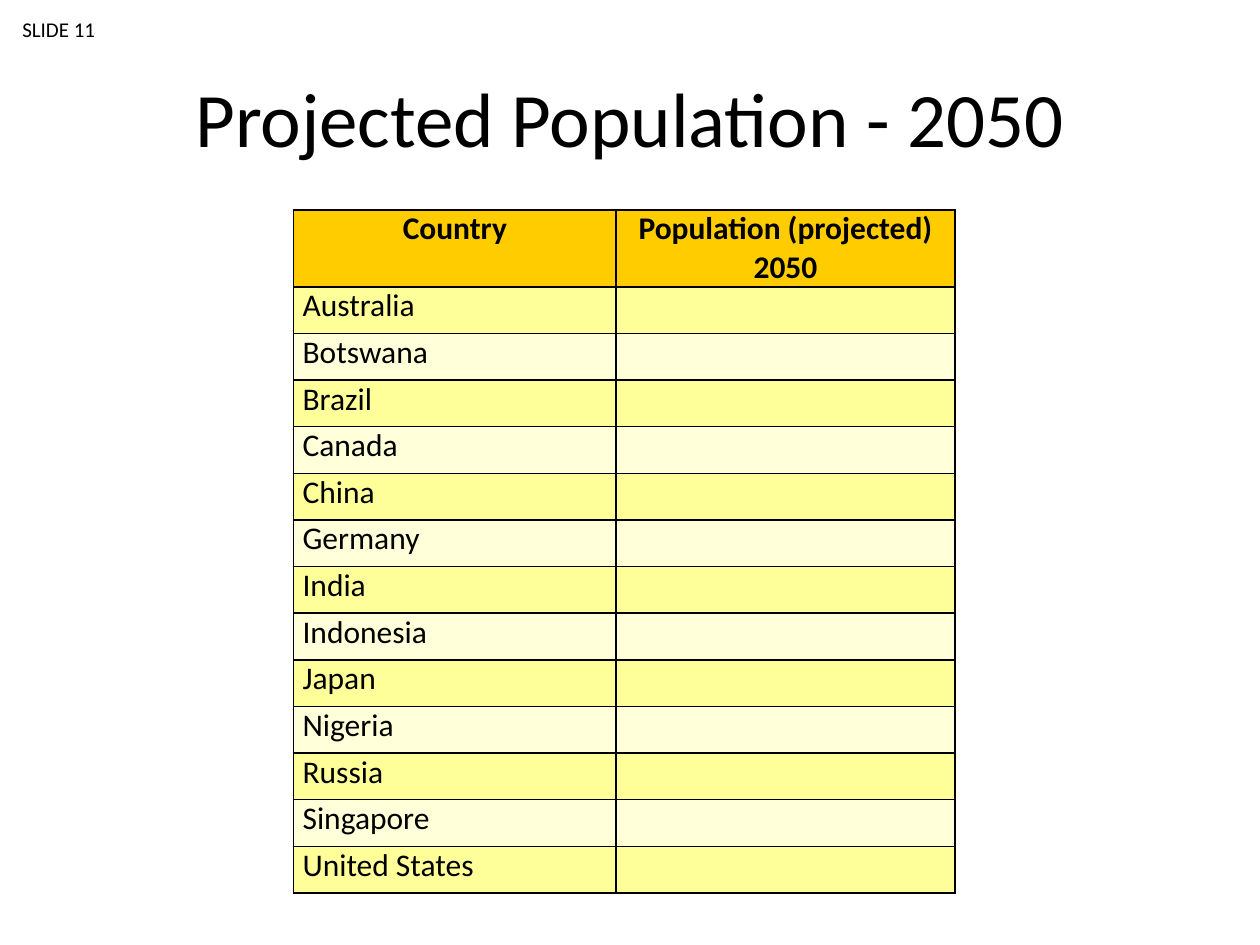
from dataclasses import dataclass
from typing import Optional

from lxml.etree import SubElement as Sub
from pptx import Presentation as Deck
from pptx.dml.color import RGBColor as Rgb
from pptx.enum.text import MSO_ANCHOR as Anchor, PP_ALIGN as Align
from pptx.oxml import parse_xml
from pptx.oxml.ns import nsdecls, qn
from pptx.util import Cm, Pt


@dataclass(frozen=True)
class Theme:
    font: str = "Calibri"
    ink: str = "000000"
    head: str = "FFCC00"
    band: str = "FFFF00"
    odd: int = 40
    even: int = 15
    title: int = 44
    body: int = 18
    small: int = 12
    rule: float = 1


@dataclass(frozen=True)
class Label:
    text: str
    left: float
    top: float
    width: float
    height: float
    size: int
    align: Align = Align.LEFT
    anchor: Anchor = Anchor.TOP
    wrap: bool = True


@dataclass(frozen=True)
class Row:
    cells: tuple[str, str]
    height: float
    fill: str
    alpha: Optional[int] = None
    bold: bool = False
    align: Align = Align.LEFT


THEME = Theme()
LABELS = (
    Label("Projected Population - 2050", 1.27, 0.76, 22.86, 3.18,
          THEME.title, Align.CENTER, Anchor.MIDDLE),
    Label("SLIDE 11", 0.2, 0.2, 2.01, 0.76, THEME.small, wrap=False),
)
LANDS = (
    "Australia", "Botswana", "Brazil", "Canada", "China", "Germany", "India",
    "Indonesia", "Japan", "Nigeria", "Russia", "Singapore", "United States",
)
ROWS = [Row(("Country", "Population (projected) 2050"), 1.55, THEME.head,
            bold=True, align=Align.CENTER)]
ROWS += [Row((land, ""), 0.94, THEME.band, (THEME.odd, THEME.even)[i % 2])
         for i, land in enumerate(LANDS)]
WIDTHS = (6.5, 6.83)


def write(frame, text: str, size: int, align: Align, bold: bool = False) -> None:
    para = frame.paragraphs[0]
    para.alignment = align
    para.font.size = Pt(size)
    if text:
        run = para.add_run()
        run.text = text
        run.font.name = THEME.font
        run.font.size = Pt(size)
        run.font.bold = bold
        run.font.color.rgb = Rgb.from_string(THEME.ink)


def add_label(slide, label: Label) -> None:
    box = slide.shapes.add_textbox(Cm(label.left), Cm(label.top),
                                   Cm(label.width), Cm(label.height))
    frame = box.text_frame
    frame.word_wrap = label.wrap
    frame.vertical_anchor = label.anchor
    write(frame, label.text, label.size, label.align)


def add_rules(cell) -> None:
    props = cell._tc.get_or_add_tcPr()
    for i, side in enumerate("LRTB"):
        props.insert(i, parse_xml(
            f'<a:ln{side} {nsdecls("a")} w="{Pt(THEME.rule)}"><a:solidFill>'
            f'<a:srgbClr val="{THEME.ink}"/></a:solidFill></a:ln{side}>'))


def fill_cell(cell, row: Row, text: str) -> None:
    cell.margin_left = cell.margin_right = Cm(0.18)
    cell.margin_top = cell.margin_bottom = 0
    cell.fill.solid()
    cell.fill.fore_color.rgb = Rgb.from_string(row.fill)
    if row.alpha is not None:
        tint = cell._tc.tcPr.find(qn("a:solidFill")).find(qn("a:srgbClr"))
        Sub(tint, qn("a:alpha"), val=str(row.alpha * 1000))
    add_rules(cell)
    write(cell.text_frame, text, THEME.body, row.align, row.bold)


def add_grid(slide, rows: list[Row], left: float, top: float) -> None:
    height = sum(row.height for row in rows)
    grid = slide.shapes.add_table(len(rows), len(WIDTHS), Cm(left), Cm(top),
                                  Cm(sum(WIDTHS)), Cm(height)).table
    for col, width in zip(grid.columns, WIDTHS):
        col.width = Cm(width)
    for line, row in zip(grid.rows, rows):
        line.height = Cm(row.height)
        for cell, text in zip(line.cells, row.cells):
            fill_cell(cell, row, text)


def main() -> None:
    deck = Deck()
    deck.slide_width, deck.slide_height = Cm(25.4), Cm(19.05)
    slide = deck.slides.add_slide(deck.slide_layouts[6])
    add_grid(slide, ROWS, 5.92, 4.23)
    for label in LABELS:
        add_label(slide, label)
    deck.save("out.pptx")


if __name__ == "__main__":
    main()
